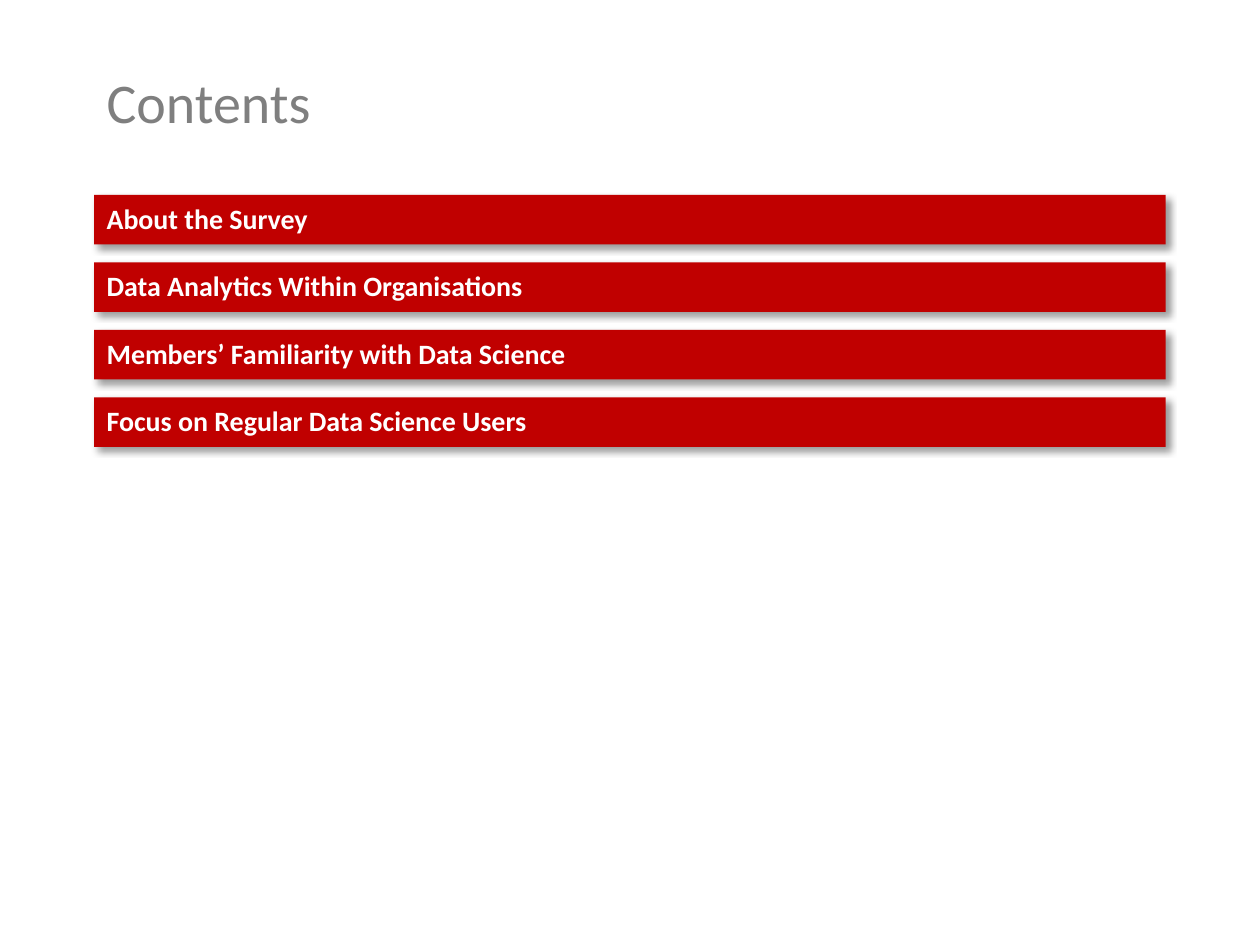
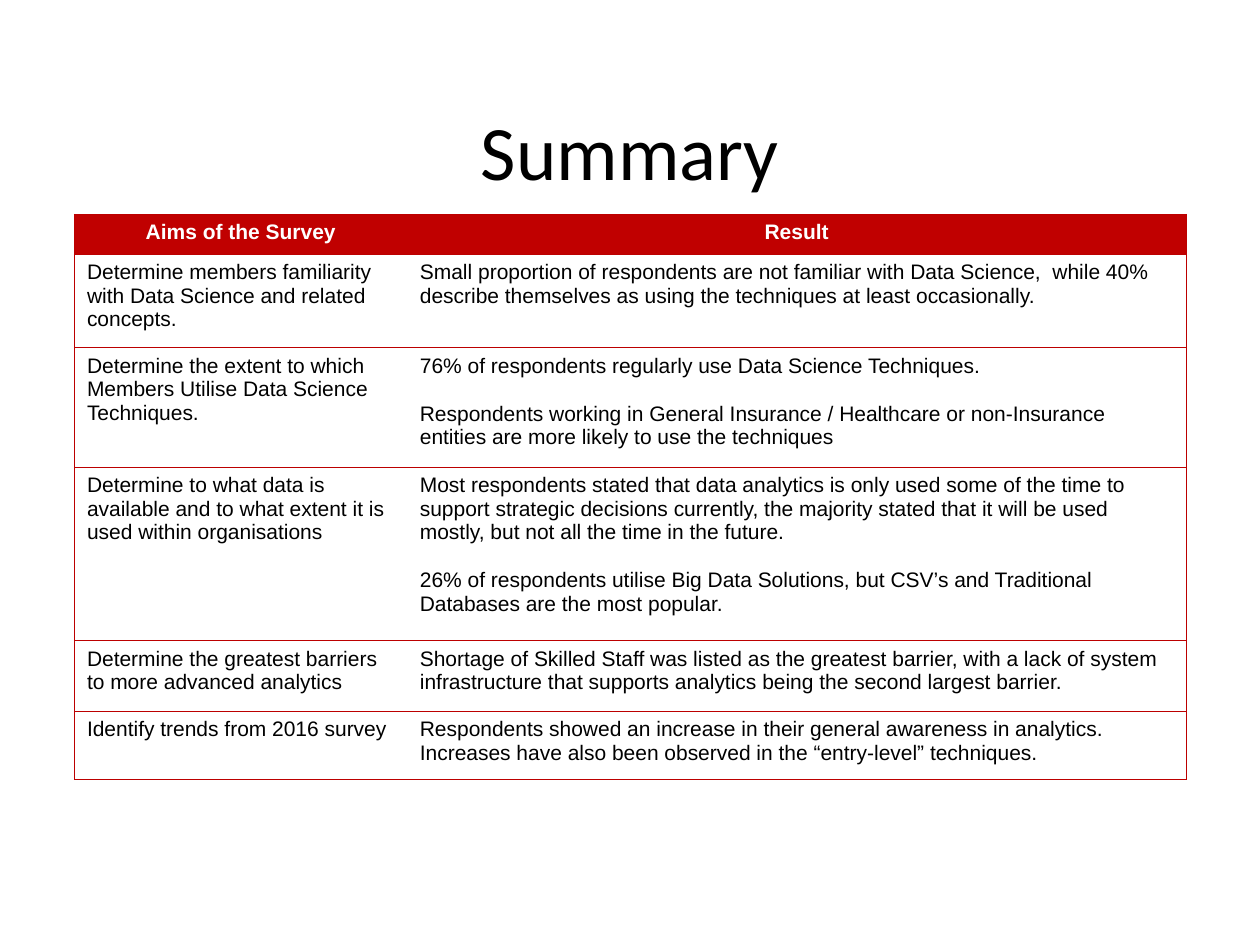
from lxml import etree
from pptx import Presentation
from pptx.dml.color import RGBColor
from pptx.enum.shapes import MSO_SHAPE
from pptx.enum.text import MSO_ANCHOR, PP_ALIGN
from pptx.oxml import parse_xml
from pptx.oxml.ns import nsdecls, qn
from pptx.util import Cm, Pt

RED = RGBColor(0xC0, 0x00, 0x00)
RULE_RED = RGBColor(0xBC, 0x00, 0x00)
GREY = RGBColor(0x7F, 0x7F, 0x7F)
BLACK = RGBColor(0x00, 0x00, 0x00)
WHITE = RGBColor(0xFF, 0xFF, 0xFF)

RECTANGLE = MSO_SHAPE.RECTANGLE
LEFT, CENTER = PP_ALIGN.LEFT, PP_ALIGN.CENTER
TOP, MIDDLE = MSO_ANCHOR.TOP, MSO_ANCHOR.MIDDLE

MARGIN = Cm(1.9)
CONTENT_WIDTH = Cm(21.6)
BAR_TOP, BAR_HEIGHT, BAR_PITCH = Cm(3.93), Cm(1), Cm(1.36)

SECTION_TITLE = {"name": "Calibri", "size": Pt(32), "color": GREY}
MAIN_TITLE = {"name": "Calibri", "size": Pt(44), "color": BLACK}
BAR_TEXT = {"name": "Calibri", "size": Pt(16), "bold": True, "color": WHITE}
HEADER_TEXT = {"name": "Arial", "size": Pt(12), "bold": True, "color": WHITE}
BODY_TEXT = {"name": "Arial", "size": Pt(12), "bold": False, "color": BLACK}

SECTIONS = [
    "About the Survey",
    "Data Analytics Within Organisations",
    "Members’ Familiarity with Data Science",
    "Focus on Regular Data Science Users",
]

COLUMN_WIDTHS = [Cm(6.71), Cm(15.7)]
ROW_HEIGHTS = [Cm(0.81), Cm(1.88), Cm(2.41), Cm(3.5), Cm(1.42), Cm(1.37)]
SUMMARY_ROWS = [
    [["Aims of the Survey"], ["Result"]],
    [
        ["Determine members familiarity with Data Science and related concepts."],
        ["Small proportion of respondents are not familiar with Data Science,  while 40% "
         "describe themselves as using the techniques at least occasionally."],
    ],
    [
        ["Determine the extent to which Members Utilise Data Science Techniques."],
        ["76% of respondents regularly use Data Science Techniques.",
         "Respondents working in General Insurance / Healthcare or non-Insurance "
         "entities are more likely to use the techniques"],
    ],
    [
        ["Determine to what data is available and to what extent it is used "
         "within organisations"],
        ["Most respondents stated that data analytics is only used some of the time to "
         "support strategic decisions currently, the majority stated that it will be "
         "used mostly, but not all the time in the future.",
         "26% of respondents utilise Big Data Solutions, but CSV’s and Traditional "
         "Databases are the most popular."],
    ],
    [
        ["Determine the greatest barriers to more advanced analytics"],
        ["Shortage of Skilled Staff was listed as the greatest barrier, with a lack of "
         "system infrastructure that supports analytics being the second largest barrier."],
    ],
    [
        ["Identify trends from 2016 survey"],
        ["Respondents showed an increase in their general awareness in analytics.  "
         "Increases have also been observed in the “entry-level” techniques."],
    ],
]


class SurveyDeck:
    def __init__(self):
        self.deck = Presentation()
        self.deck.slide_width, self.deck.slide_height = Cm(25.4), Cm(19.05)
        self.page = None

    def new_page(self):
        self.page = self.deck.slides.add_slide(self.deck.slide_layouts[6])

    def fill_text(self, frame, texts, style, align=LEFT, gap=Pt(0)):
        """Fill a text frame, one paragraph per text, with gap between them."""
        frame.word_wrap = True
        for index, text in enumerate(texts):
            para = frame.add_paragraph() if index else frame.paragraphs[0]
            para.alignment = align
            if index:
                para.space_before = gap
            span = para.add_run()
            span.text = text
            for key, value in style.items():
                if key == "color":
                    span.font.color.rgb = value
                else:
                    setattr(span.font, key, value)

    def title(self, text, top, height, style, align=LEFT):
        box = self.page.shapes.add_textbox(MARGIN, top, CONTENT_WIDTH, height)
        box.text_frame.vertical_anchor = MIDDLE
        self.fill_text(box.text_frame, [text], style, align)

    def bar(self, text, top):
        box = self.page.shapes.add_shape(RECTANGLE, MARGIN, top, CONTENT_WIDTH, BAR_HEIGHT)
        box.fill.solid()
        box.fill.fore_color.rgb = RED
        box.line.fill.background()
        self.drop_shadow(box)
        box.text_frame.vertical_anchor = TOP
        self.fill_text(box.text_frame, [text], BAR_TEXT)

    def drop_shadow(self, shape):
        shape.shadow.inherit = False
        effects = shape._element.spPr.find(qn("a:effectLst"))
        effects.append(parse_xml(
            f'<a:outerShdw {nsdecls("a")} blurRad="{Pt(4)}" dist="{Pt(3)}" '
            f'dir="{45 * 60000}" algn="tl" rotWithShape="0"><a:srgbClr val="{BLACK}">'
            '<a:alpha val="40000"/></a:srgbClr></a:outerShdw>'))

    def cell_borders(self, cell, is_first, is_last):
        """Rule every row and the outer sides, leaving column joints open."""
        properties = cell._tc.get_or_add_tcPr()
        visible = {"lnL": is_first, "lnR": is_last, "lnT": True, "lnB": True}
        for side, shown in visible.items():
            line = etree.SubElement(properties, qn(f"a:{side}"), w=str(Pt(0.75)))
            if shown:
                fill = etree.SubElement(line, qn("a:solidFill"))
                etree.SubElement(fill, qn("a:srgbClr"), val=str(RULE_RED))
            else:
                etree.SubElement(line, qn("a:noFill"))

    def table(self, rows, left, top):
        table = self.page.shapes.add_table(
            len(rows), len(COLUMN_WIDTHS), left, top,
            sum(COLUMN_WIDTHS), sum(ROW_HEIGHTS)).table
        table.horz_banding = False
        for column, width in zip(table.columns, COLUMN_WIDTHS):
            column.width = width
        for row, height in zip(table.rows, ROW_HEIGHTS):
            row.height = height
        last = len(COLUMN_WIDTHS) - 1
        for row_index, row_texts in enumerate(rows):
            is_header = row_index == 0
            for column_index, texts in enumerate(row_texts):
                cell = table.cell(row_index, column_index)
                self.cell_borders(cell, column_index == 0, column_index == last)
                cell.fill.solid()
                cell.fill.fore_color.rgb = RED if is_header else WHITE
                self.fill_text(cell.text_frame, texts,
                               HEADER_TEXT if is_header else BODY_TEXT,
                               CENTER if is_header else LEFT, gap=Pt(14))


def main():
    survey = SurveyDeck()

    survey.new_page()
    survey.title("Contents", Cm(0.94), Cm(2.18), SECTION_TITLE)
    for index, section in enumerate(SECTIONS):
        survey.bar(section, BAR_TOP + index * BAR_PITCH)

    survey.new_page()
    survey.title("Summary", Cm(1.7), Cm(2.64), MAIN_TITLE, CENTER)
    survey.table(SUMMARY_ROWS, Cm(1.5), Cm(4.32))

    survey.deck.save("out.pptx")


if __name__ == "__main__":
    main()
